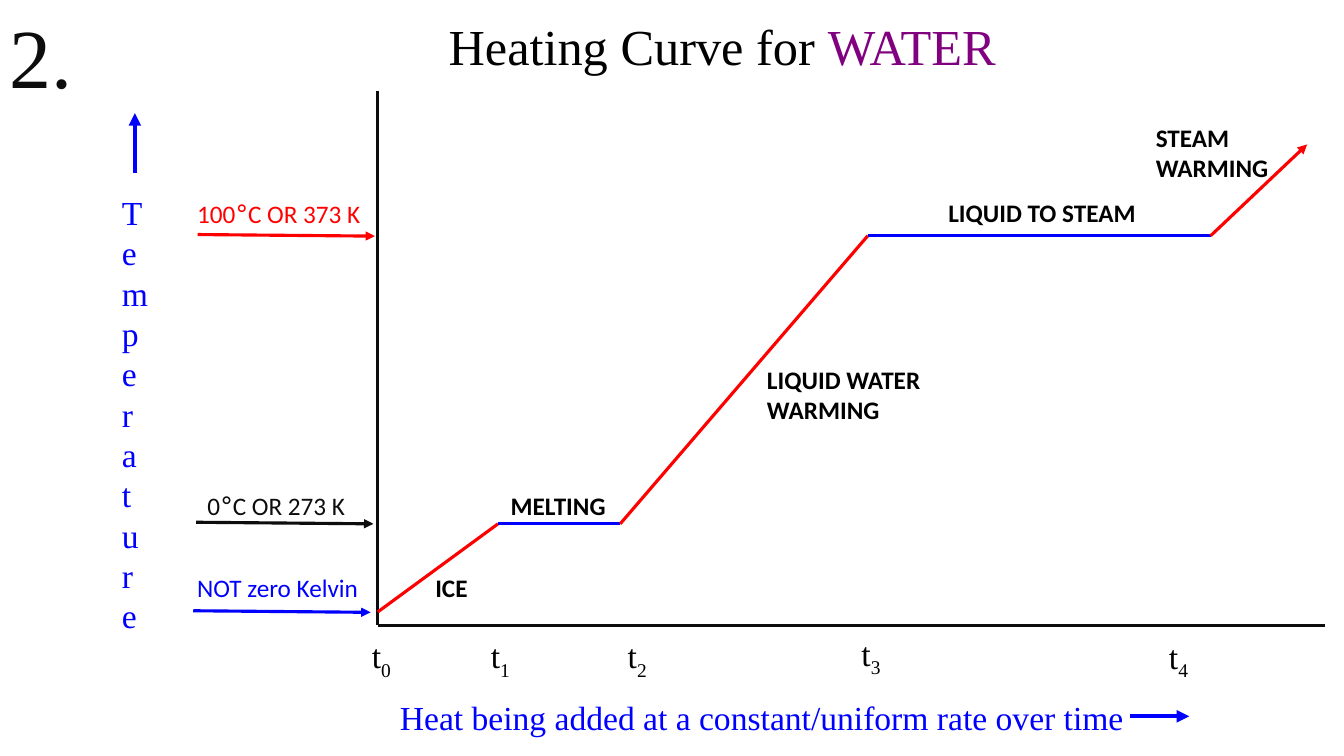
import pptx
import pptx.dml.color
import pptx.enum.shapes
import pptx.enum.text
import pptx.util
import pptx.oxml
import pptx.oxml.ns

Cm, Pt = pptx.util.Cm, pptx.util.Pt
BLACK, INK, RED, BLUE, PURPLE = "000000", "0D0D0D", "FF0000", "0000FF", "800080"
SERIF, SANS, SYMBOL = "Times New Roman", "Calibri", "DejaVu Sans"

# All lengths are in centimetres.
AXIS_X, AXIS_Y, AXIS_TOP, AXIS_RIGHT = 9.52, 15.76, 2.29, 33.4
CURVE = [(9.52, 15.42), (12.55, 13.2), (15.63, 13.2),
         (21.87, 5.94), (30.51, 5.94), (32.94, 3.64)]
POINTERS = [(4.98, 5.91, RED), (4.94, 13.16, INK), (4.87, 15.39, BLUE)]
POINTER_W, POINTER_DROP = 4.47, 0.04
DIRECTION_ARROWS = [(3.4, 4.35, 3.4, 2.85), (28.47, 18.05, 29.97, 18.05)]

TITLE = ["Heating Curve for ", "WATER"]
TITLE_BOX = (11.05, 0.25, 18.72, 1.8)
HEAT_BOX = (9.83, 17.44, 23.11, 1.27)
TEMPERATURE_BOX = (2.82, 4.71, 1.63, 12)

STAGES = [  # text, left, top, width, height
    ("ICE", 10.72, 14.3, 2.57, 1.02),
    ("MELTING", 12.62, 12.22, 3.05, 1.02),
    ("LIQUID WATER\nWARMING", 19.08, 9.06, 4.5, 1.8),
    ("LIQUID TO STEAM", 23.65, 4.85, 8.36, 1.02),
    ("STEAM\nWARMING", 28.88, 2.95, 3.96, 1.8),
]
LEVELS = [  # number, unit, left, top, colour
    ("100", "C OR 373 K", 4.72, 4.88, RED),
    ("0", "C OR 273 K", 4.98, 12.24, INK),
]
TIMES = [(9.12, 15.88), (12.12, 15.88), (15.57, 15.88), (21.46, 15.82), (29.21, 15.9)]


def rgb(value):
    return pptx.dml.color.RGBColor.from_string(value)


def write(sp, runs):
    """Fill a shape with runs of (text, format); a newline is a line break."""
    tf = sp.text_frame
    tf.word_wrap = True
    tf.vertical_anchor = pptx.enum.text.MSO_ANCHOR.TOP
    p = tf.paragraphs[0]
    p.alignment = pptx.enum.text.PP_ALIGN.LEFT
    for text, fmt in runs:
        for i, line in enumerate(text.split("\n")):
            if i:
                p.add_line_break()
            r = p.add_run()
            r.text = line
            r.font.color.rgb = rgb(fmt["color"])
            for name in ("name", "size", "bold"):
                if name in fmt:
                    setattr(r.font, name, fmt[name])
            if "baseline" in fmt:
                r.font._element.set("baseline", fmt["baseline"])


def style(name, size, color, **extra):
    return dict(name=name, size=Pt(size), color=color, **extra)


def add_text(slide, box, runs):
    sp = slide.shapes.add_textbox(*map(Cm, box))
    write(sp, runs)
    return sp


def add_line(slide, x1, y1, x2, y2, color, width=2.25, arrow=False):
    line = slide.shapes.add_connector(
        pptx.enum.shapes.MSO_CONNECTOR.STRAIGHT, *map(Cm, (x1, y1, x2, y2)))
    line.line.color.rgb = rgb(color)
    line.line.width = Pt(width)
    if arrow:
        ln = line.line._get_or_add_ln()
        ln.append(pptx.oxml.parse_xml(
            f'<a:tailEnd {pptx.oxml.ns.nsdecls("a")} type="triangle"/>'))
    line._element.spPr.append(pptx.oxml.parse_xml(
        f'<a:effectLst {pptx.oxml.ns.nsdecls("a")}/>'))


def main():
    prs = pptx.Presentation()
    prs.slide_width, prs.slide_height = Cm(33.87), Cm(19.05)
    slide = prs.slides.add_slide(prs.slide_layouts[5])

    add_line(slide, AXIS_X, AXIS_TOP, AXIS_X, AXIS_Y, INK)
    add_line(slide, AXIS_X, AXIS_Y, AXIS_RIGHT, AXIS_Y, INK)
    for i, (start, end) in enumerate(zip(CURVE, CURVE[1:])):
        add_line(slide, *start, *end, BLUE if i % 2 else RED,
                 arrow=end == CURVE[-1])
    for x, y, color in POINTERS:
        add_line(slide, x, y, x + POINTER_W, y + POINTER_DROP, color, arrow=True)
    for ends in DIRECTION_ARROWS:
        add_line(slide, *ends, BLUE, 3, arrow=True)

    title = slide.shapes.title
    for name, value in zip(("left", "top", "width", "height"), TITLE_BOX):
        setattr(title, name, Cm(value))
    write(title, [(text, style(SERIF, 36, color))
                  for text, color in zip(TITLE, (BLACK, PURPLE))])

    add_text(slide, (0, 0, 2.59, 2.82), [("2.", style(SERIF, 60, INK))])
    for text, *box in STAGES:
        add_text(slide, box, [(text, style(SANS, 18, BLACK, bold=True))])
    for number, unit, x, y, color in LEVELS:
        add_text(slide, (x, y, 5.49, 1.02),
                 [(number, style(SANS, 18, color)),
                  ("°", style(SYMBOL, 18, color)),
                  (unit, style(SANS, 18, color))])
    add_text(slide, (4.72, 14.3, 5.11, 1.02),
             [("NOT zero Kelvin", style(SANS, 18, BLUE))])
    for i, (x, y) in enumerate(TIMES):
        add_text(slide, (x, y, 1.09, 1.27),
                 [("t", style(SERIF, 24, BLACK)),
                  (str(i), style(SERIF, 24, BLACK, baseline="-25000"))])

    add_text(slide, HEAT_BOX,
             [("Heat being added at a constant/uniform rate over time",
               style(SERIF, 24, BLUE))])
    sp = add_text(slide, TEMPERATURE_BOX,
                  [("Temperature", style(SERIF, 24, BLUE))])
    sp.text_frame.vertical_anchor = pptx.enum.text.MSO_ANCHOR.MIDDLE
    sp.text_frame._txBody.bodyPr.set("vert", "wordArtVert")

    prs.save("out.pptx")


if __name__ == "__main__":
    main()
